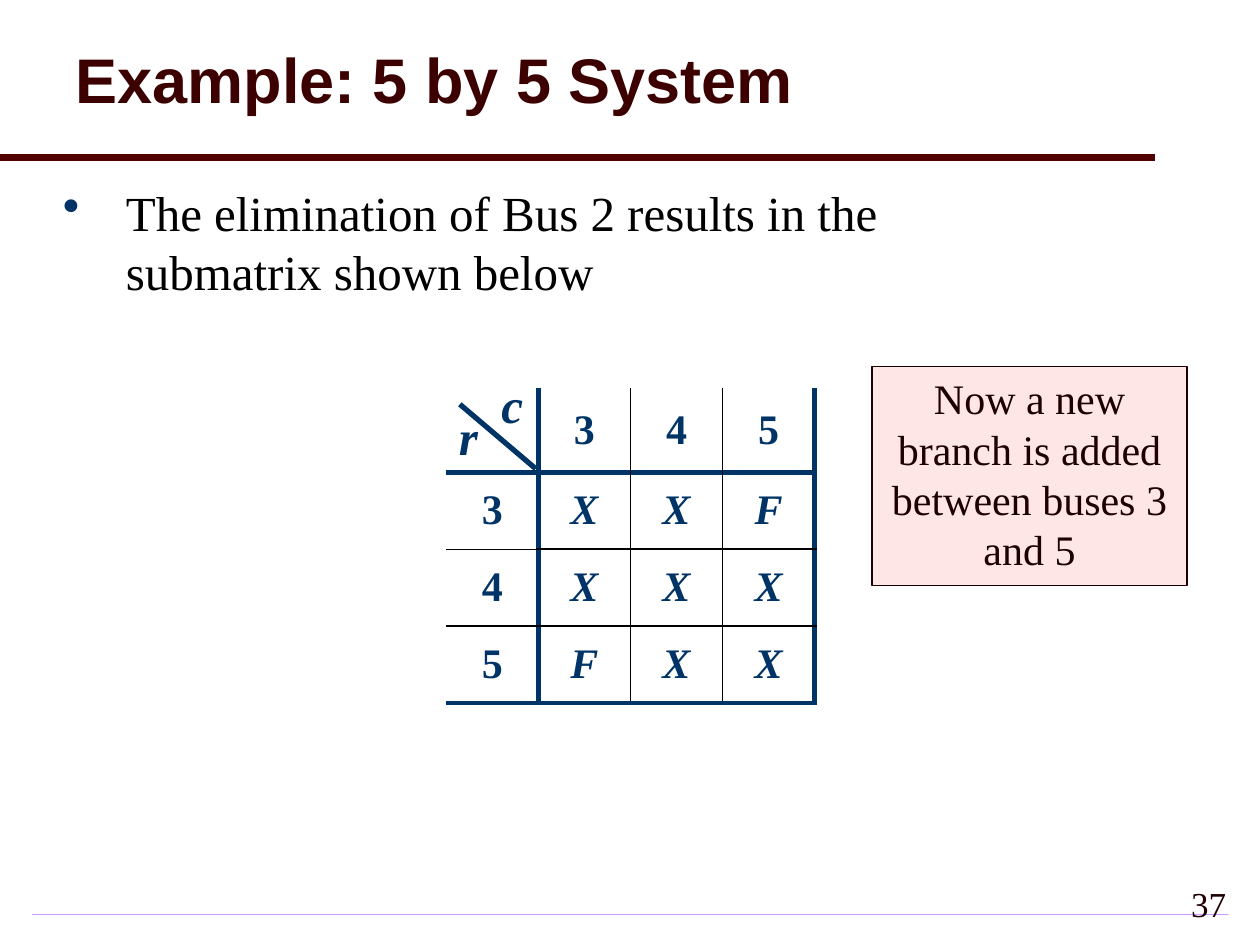
import pptx
import pptx.util
import pptx.dml.color
import pptx.enum.shapes
import pptx.enum.text
import pptx.oxml.ns
from lxml import etree

Cm, Pt = pptx.util.Cm, pptx.util.Pt
RGBColor = pptx.dml.color.RGBColor
PP_ALIGN, MSO_ANCHOR = pptx.enum.text.PP_ALIGN, pptx.enum.text.MSO_ANCHOR
MSO_SHAPE = pptx.enum.shapes.MSO_SHAPE
qn = pptx.oxml.ns.qn

NAVY = RGBColor(0x00, 0x33, 0x66)
BLACK = RGBColor(0x00, 0x00, 0x00)
MAROON = RGBColor(0x50, 0x00, 0x00)
TITLE = RGBColor(0x3C, 0x00, 0x00)
DARK = RGBColor(0x1E, 0x00, 0x00)
PINK = RGBColor(0xFF, 0xE6, 0xE6)
VIOLET = RGBColor(0xCC, 0x99, 0xFF)
PALE = RGBColor(0xF3, 0xEB, 0xFF)


def write(tf, text, size, color, font="Times New Roman", bold=False,
          italic=False, align=PP_ALIGN.LEFT, anchor=MSO_ANCHOR.TOP):
    tf.word_wrap = True
    tf.vertical_anchor = anchor
    p = tf.paragraphs[0]
    p.alignment = align
    r = p.add_run()
    r.text = text
    r.font.name, r.font.size = font, Pt(size)
    r.font.bold, r.font.italic = bold, italic
    r.font.color.rgb = color
    return p


def add_line(s, x1, y1, x2, y2, color, width):
    line = s.shapes.add_connector(pptx.enum.shapes.MSO_CONNECTOR.STRAIGHT,
                                  Cm(x1), Cm(y1), Cm(x2), Cm(y2))
    line.line.color.rgb = color
    line.line.width = Pt(width)
    etree.SubElement(line._element.spPr, qn("a:effectLst"))


prs = pptx.Presentation()
prs.slide_width, prs.slide_height = Cm(25.4), Cm(19.05)
s = prs.slides.add_slide(prs.slide_layouts[5])

# Footer rule with a gradient from its centre
sp = s.shapes.add_shape(MSO_SHAPE.RECTANGLE, Cm(0.64), Cm(18.42), Cm(24.13), Cm(0.03))
sp.shadow.inherit = False
sp.line.fill.background()
sp.fill.gradient()
for stop, color in zip(sp.fill.gradient_stops, (VIOLET, PALE)):
    stop.color.rgb = color
grad = sp._element.spPr.find(qn("a:gradFill"))
lin = grad.find(qn("a:lin"))
centre = etree.Element(qn("a:path"), path="shape")
etree.SubElement(centre, qn("a:fillToRect"), l="50000", t="50000", r="50000", b="50000")
grad.replace(lin, centre)

# Title and the rule under it
sp = s.shapes.title
sp.left, sp.top, sp.width, sp.height = Cm(1.27), Cm(0.2), Cm(22.23), Cm(2.97)
sp.text_frame.auto_size = pptx.enum.text.MSO_AUTO_SIZE.NONE
p = write(sp.text_frame, "Example: 5 by 5 System", 36, TITLE, font="Arial",
          bold=True, anchor=MSO_ANCHOR.MIDDLE)
p.line_spacing = 0.9
add_line(s, 0, 3.18, 23.29, 3.18, MAROON, 4)

# Bullet text
sp = s.shapes.add_textbox(Cm(1.02), Cm(3.56), Cm(21.01), Cm(2.64))
p = write(sp.text_frame, "The elimination of Bus 2 results in the submatrix shown below",
          28, BLACK)
pPr = p._p.get_or_add_pPr()
pPr.set("marL", str(Cm(1.27)))
pPr.set("indent", str(-Cm(1.27)))
color = etree.SubElement(pPr, qn("a:buClr"))
etree.SubElement(color, qn("a:srgbClr"), val=str(NAVY))
etree.SubElement(pPr, qn("a:buChar"), char="•")

# Submatrix table: heavy rules close the headers and the outer right and bottom
rows = [["", "3", "4", "5"],
        ["3", "X", "X", "F"],
        ["4", "X", "X", "X"],
        ["5", "F", "X", "X"]]
table = s.shapes.add_table(4, 4, Cm(9), Cm(7.82), Cm(7.42), Cm(6.35)).table
table.first_row = table.horz_banding = False
for col in table.columns:
    col.width = Cm(1.855)
for i, row in enumerate(table.rows):
    row.height = Cm(1.55 if i > 0 else 1.7)
for i, row in enumerate(rows):
    for j, text in enumerate(row):
        cell = table.cell(i, j)
        tcPr = cell._tc.get_or_add_tcPr()
        # Each side: number of the grid line, and whether it crosses a header
        sides = {"L": (j, i == 0), "R": (j + 1, i == 0),
                 "T": (i, j == 0), "B": (i + 1, j == 0)}
        for side, (grid, header) in sides.items():
            heavy = grid in (1, 4)
            width = 3 if heavy else 0.75 if header else 1
            ln = etree.SubElement(tcPr, qn("a:ln" + side), w=str(Pt(width)))
            if grid == 0:
                etree.SubElement(ln, qn("a:noFill"))
            else:
                fill = etree.SubElement(ln, qn("a:solidFill"))
                etree.SubElement(fill, qn("a:srgbClr"), val=str(NAVY if heavy else BLACK))
        cell.fill.background()
        if text:
            cell.vertical_anchor = MSO_ANCHOR.MIDDLE
            write(cell.text_frame, text, 24, NAVY, bold=True,
                  italic=text.isalpha(), align=PP_ALIGN.CENTER, anchor=MSO_ANCHOR.MIDDLE)

# Row and column labels in the corner cell, split by a diagonal
for text, x, y in (("r", 9, 8.08), ("c", 9.86, 7.42)):
    sp = s.shapes.add_textbox(Cm(x), Cm(y), Cm(0.53), Cm(1.45))
    write(sp.text_frame, text, 28, NAVY, bold=True, italic=True)
add_line(s, 10.8, 9.45, 9.27, 8.15, NAVY, 3)

# Slide number
sp = s.shapes.add_textbox(Cm(19.69), Cm(17.58), Cm(5.28), Cm(1.27))
write(sp.text_frame, "37", 20, DARK, align=PP_ALIGN.RIGHT, anchor=MSO_ANCHOR.MIDDLE)

# Note on the new branch
sp = s.shapes.add_shape(MSO_SHAPE.RECTANGLE, Cm(17.58), Cm(7.39), Cm(6.35), Cm(4.42))
sp.shadow.inherit = False
sp.fill.solid()
sp.fill.fore_color.rgb = PINK
sp.line.color.rgb = DARK
sp.line.width = Pt(0.75)
write(sp.text_frame, "Now a new branch is added between buses 3 and 5", 24, DARK,
      align=PP_ALIGN.CENTER)

prs.save("out.pptx")
